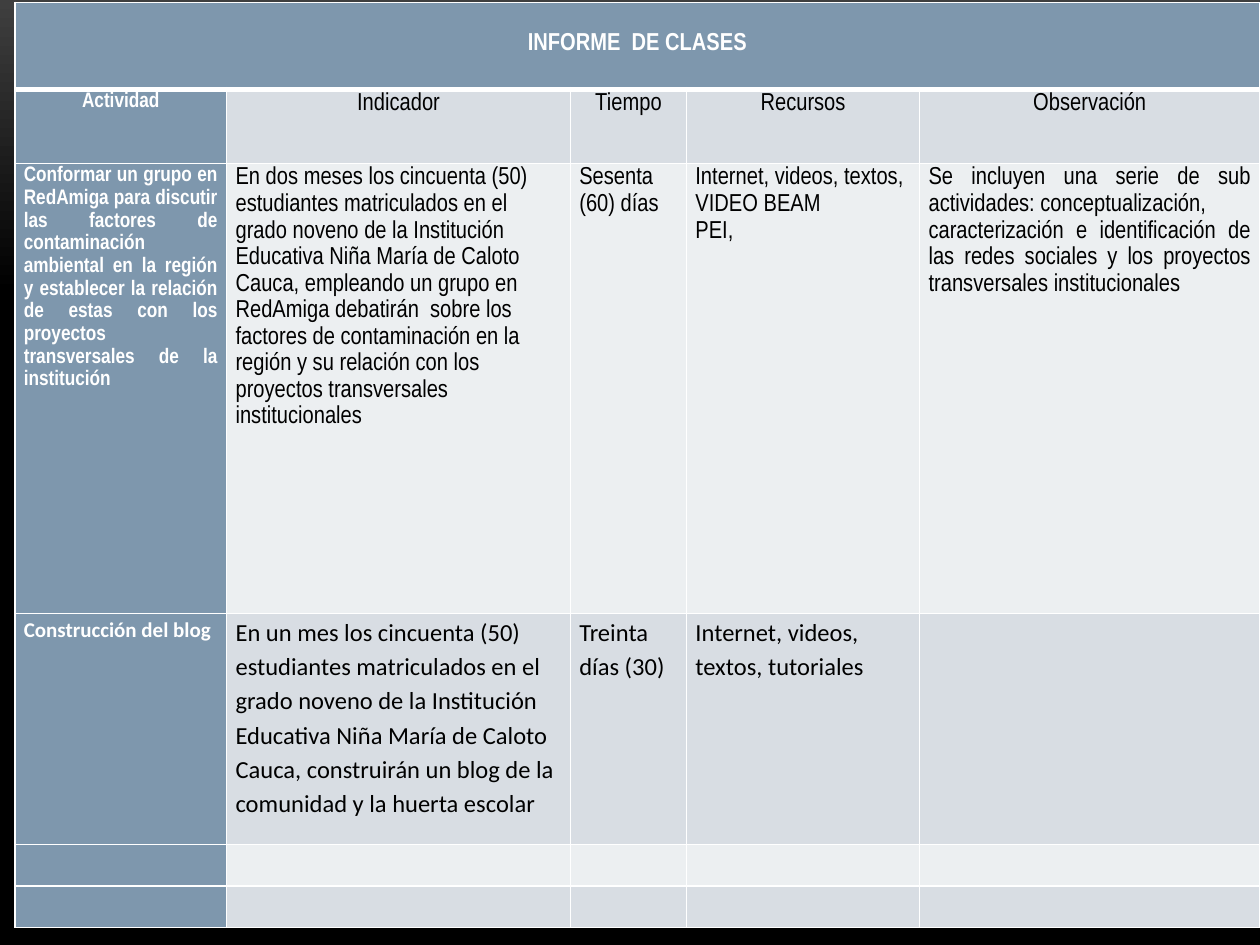
from lxml import etree
from pptx import Presentation
from pptx import util as u
from pptx.dml.color import RGBColor
from pptx.enum import text
from pptx.oxml import ns

COLORS = {
    "header": "7E97AD",
    "dark_band": "D8DDE3",
    "light_band": "ECEFF1",
    "white": "FFFFFF",
    "black": "000000",
    "gray": "3F3F3F",
}
LEFT, CENTER, JUSTIFY = (
    text.PP_ALIGN.LEFT,
    text.PP_ALIGN.CENTER,
    text.PP_ALIGN.JUSTIFY,
)
column_widths = [4.27, 6.93, 2.34, 4.7, 6.86]
row_heights = [1.75, 1.5, 9.07, 4.65, 0.84, 0.84]
row_fonts = ["Arial Narrow"] * 3 + ["Calibri"] * 3
row_bands = ["header", "dark_band", "light_band", "dark_band", "light_band", "dark_band"]
justified = {(2, 0), (2, 4)}
report = [
    ["INFORME  DE CLASES"],
    ["Actividad", "Indicador", "Tiempo", "Recursos", "Observación"],
    [
        "Conformar un grupo en RedAmiga para discutir las factores de "
        "contaminación ambiental en la región y establecer la relación de "
        "estas con los proyectos transversales de la institución",
        "En dos meses los cincuenta (50) estudiantes matriculados en el grado "
        "noveno de la Institución Educativa Niña María de Caloto Cauca, "
        "empleando un grupo en RedAmiga debatirán  sobre los factores de "
        "contaminación en la región y su relación con los proyectos "
        "transversales institucionales",
        "Sesenta (60) días",
        "Internet, videos, textos, VIDEO BEAM\nPEI,",
        "Se incluyen una serie de sub actividades: conceptualización,\n"
        "caracterización e identificación de las redes sociales y los "
        "proyectos transversales institucionales",
    ],
    [
        "Construcción del blog",
        "En un mes los cincuenta (50) estudiantes matriculados en el grado "
        "noveno de la Institución Educativa Niña María de Caloto Cauca, "
        "construirán un blog de la comunidad y la huerta escolar",
        "Treinta días (30)",
        "Internet, videos, textos, tutoriales",
    ],
]


def rgb(name):
    return RGBColor.from_string(COLORS[name])


def set_borders(cell, widths):
    properties = cell._tc.get_or_add_tcPr()
    for index, (side, width) in enumerate(widths.items()):
        border = etree.Element(ns.qn(f"a:{side}"), w=str(u.Pt(width)))
        fill = etree.SubElement(border, ns.qn("a:solidFill"))
        etree.SubElement(fill, ns.qn("a:srgbClr"), val=COLORS["white"])
        properties.insert(index, border)


prs = Presentation()
prs.slide_width, prs.slide_height = u.Cm(25.4), u.Cm(19.05)
slide = prs.slides.add_slide(prs.slide_layouts[6])

backdrop = slide.background.fill
backdrop.gradient()
backdrop.gradient_angle = 270
for stop, (color, position) in zip(backdrop.gradient_stops, [("gray", 0), ("black", 0.31)]):
    stop.color.rgb = rgb(color)
    stop.position = position

table = slide.shapes.add_table(
    len(row_heights), len(column_widths),
    u.Cm(0.3), u.Cm(0.05), u.Cm(sum(column_widths)), u.Cm(sum(row_heights)),
).table
table.first_row = table.horz_banding = False
for column, width in zip(table.columns, column_widths):
    column.width = u.Cm(width)
for row, height in zip(table.rows, row_heights):
    row.height = u.Cm(height)
table.cell(0, 0).merge(table.cell(0, len(column_widths) - 1))

for r, row in enumerate(table.rows):
    for c, cell in enumerate(row.cells):
        is_header = r == 0 or c == 0
        margins = {
            "margin_left": u.Cm(0.18),
            "margin_right": u.Cm(0.18),
            "margin_top": u.Cm(0.53 if r == 0 else 0),
            "margin_bottom": 0,
        }
        for attribute, value in margins.items():
            setattr(cell, attribute, value)
        cell.fill.solid()
        cell.fill.fore_color.rgb = rgb("header" if is_header else row_bands[r])
        set_borders(cell, {"lnL": 1, "lnR": 1, "lnT": 3 if r == 1 else 1, "lnB": 3 if r == 0 else 1})

        if r >= len(report) or c >= len(report[r]):
            continue
        cell.text = report[r][c]
        font_format = {
            "name": row_fonts[r],
            "size": u.Pt(12 if c == 0 and r > 0 else 14),
            "bold": is_header,
        }
        for paragraph in cell.text_frame.paragraphs:
            paragraph.alignment = CENTER if r < 2 else JUSTIFY if (r, c) in justified else LEFT
            paragraph.line_spacing = 1.15
            for run in paragraph.runs:
                for attribute, value in font_format.items():
                    setattr(run.font, attribute, value)
                run.font.color.rgb = rgb("white" if is_header else "black")

prs.save("out.pptx")
